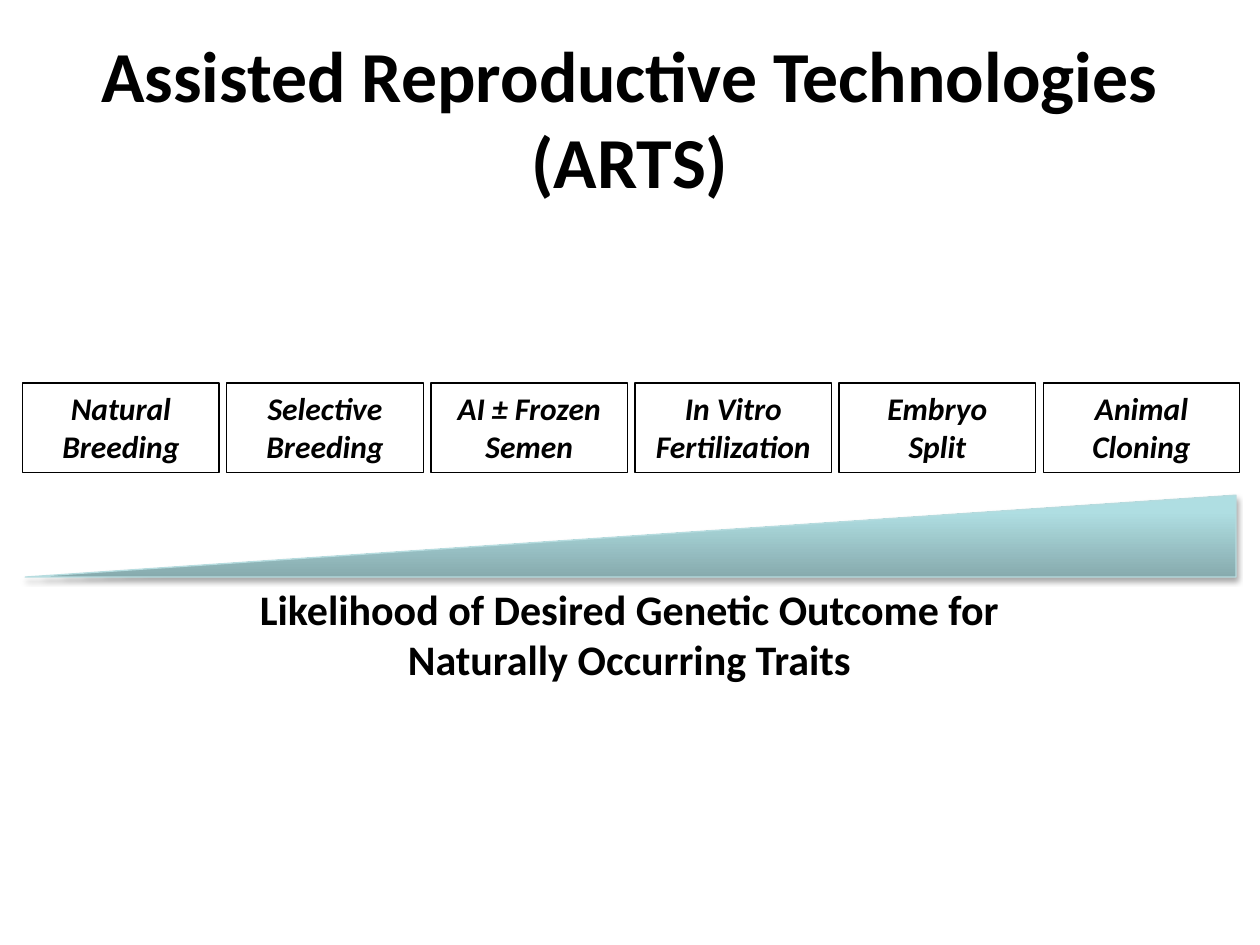
from lxml import etree
from pptx import Presentation
from pptx import util as u
from pptx.dml.color import RGBColor
from pptx.enum import shapes, text
from pptx.oxml.ns import qn

INK = "000000"


def tint(code):
    return RGBColor.from_string(code)


class Deck:
    font = "Calibri"

    def __init__(self):
        self.prs = Presentation()
        self.prs.slide_width = u.Inches(10)
        self.prs.slide_height = u.Inches(7.5)
        self.slide = self.prs.slides.add_slide(self.prs.slide_layouts[5])

    def place(self, area):
        return [u.Inches(n) for n in area]

    def letter(self, shape, words, size, italic=False, anchor=text.MSO_ANCHOR.TOP):
        frame = shape.text_frame
        frame.text = words
        frame.word_wrap = True
        frame.vertical_anchor = anchor
        for para in frame.paragraphs:
            para.alignment = text.PP_ALIGN.CENTER
            for run in para.runs:
                font = run.font
                font.name, font.size = self.font, u.Pt(size)
                font.bold, font.italic = True, italic
                font.color.rgb = tint(INK)

    def title(self, words, area):
        shape = self.slide.shapes.title
        shape.left, shape.top, shape.width, shape.height = self.place(area)
        self.letter(shape, words, 41, anchor=text.MSO_ANCHOR.MIDDLE)

    def label(self, words, area):
        self.letter(self.slide.shapes.add_textbox(*self.place(area)), words, 24)

    def shape(self, kind, area, line):
        shape = self.slide.shapes.add_shape(kind, *self.place(area))
        shape.shadow.inherit = False
        shape.line.color.rgb = tint(line)
        shape.line.width = u.Pt(0.75)
        return shape

    def box(self, words, area):
        shape = self.shape(shapes.MSO_SHAPE.RECTANGLE, area, INK)
        shape.fill.background()
        self.letter(shape, words, 18, italic=True)

    def wedge(self, area):
        shape = self.shape(shapes.MSO_SHAPE.RIGHT_TRIANGLE, area, "B6DCDF")
        props = shape._element.spPr
        props.xfrm.set("flipH", "1")
        # Dark at the base, light towards the top
        fill = shape.fill
        fill.gradient()
        fill.gradient_angle = 90
        for stop, (pos, code) in zip(fill.gradient_stops, [(0, "87ABAE"), (0.8, "AFDEE2")]):
            stop.position = pos
            stop.color.rgb = tint(code)
        # Soft shadow below
        cast = etree.SubElement(
            props.find(qn("a:effectLst")), qn("a:outerShdw"),
            blurRad=str(u.Pt(3.1)), dist=str(u.Pt(1.8)), dir="5400000", rotWithShape="0")
        shade = etree.SubElement(cast, qn("a:srgbClr"), val=INK)
        etree.SubElement(shade, qn("a:alpha"), val="35000")


def main():
    deck = Deck()
    deck.title("Assisted Reproductive Technologies (ARTS)", (0.5, 0.3, 9, 1.25))

    # Row of breeding methods
    steps = ["Natural Breeding", "Selective Breeding", "AI ± Frozen Semen",
             "In Vitro Fertilization", "Embryo\nSplit", "Animal Cloning"]
    left, pitch = 0.18, 1.62
    for i, step in enumerate(steps):
        deck.box(step, (left + i * pitch, 3.04, 1.56, 0.71))

    # Rising likelihood
    deck.wedge((0.2, 3.93, 9.61, 0.65))
    deck.label("Likelihood of Desired Genetic Outcome for Naturally Occurring Traits",
               (1.79, 4.58, 6.41, 0.9))

    deck.prs.save("out.pptx")


if __name__ == "__main__":
    main()
